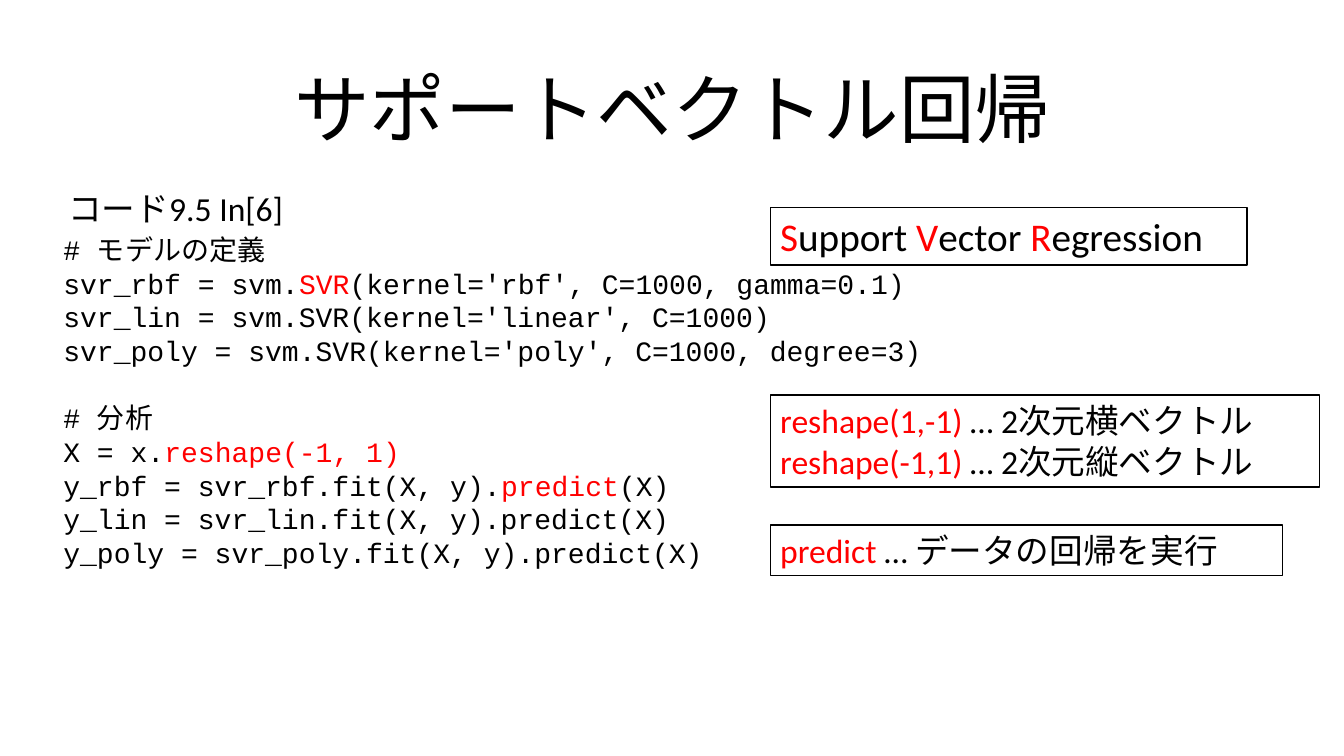
from lxml.etree import SubElement
from pptx import Presentation
from pptx.dml.color import RGBColor
from pptx.enum.shapes import MSO_SHAPE
from pptx.enum.text import MSO_ANCHOR, PP_ALIGN
from pptx.oxml.ns import qn
from pptx.util import Inches, Pt

COLORS = {"text": "000000", "key": "FF0000", "paper": "FFFFFF"}
JAPANESE = "Noto Sans CJK JP"


def write(frame, lines, font, size):
    """Fill a frame with lines of runs; text between * marks is in the key colour."""
    frame.word_wrap = True
    for number, line in enumerate(lines):
        paragraph = frame.paragraphs[0] if number == 0 else frame.add_paragraph()
        paragraph.alignment = PP_ALIGN.LEFT
        for part, words in enumerate(line.split("*")):
            if not words:
                continue
            run = paragraph.add_run()
            run.text = words
            run.font.name = font
            run.font.size = Pt(size)
            color = COLORS["key" if part % 2 else "text"]
            run.font.color.rgb = RGBColor.from_string(color)
            SubElement(run.font._element, qn("a:ea"), typeface=JAPANESE)


prs = Presentation()
prs.slide_width, prs.slide_height = Inches(13.33), Inches(7.5)
slide = prs.slides.add_slide(prs.slide_layouts[6])

# Title
title = slide.shapes.add_textbox(
    Inches(0.92), Inches(0.4), Inches(11.5), Inches(1.45)).text_frame
write(title, ["サポートベクトル回帰"], JAPANESE, 54)
title.vertical_anchor = MSO_ANCHOR.MIDDLE
title.paragraphs[0].alignment = PP_ALIGN.CENTER
title.paragraphs[0].line_spacing = 0.9

# Code listing
caption = slide.shapes.add_textbox(
    Inches(0.58), Inches(1.82), Inches(2.41), Inches(0.5)).text_frame
write(caption, ["コード9.5 In[6]"], "Calibri", 24)

model_code = [
    "# モデルの定義",
    "svr_rbf = svm.*SVR*(kernel='rbf', C=1000, gamma=0.1)",
    "svr_lin = svm.SVR(kernel='linear', C=1000)",
    "svr_poly = svm.SVR(kernel='poly', C=1000, degree=3)",
]
analysis_code = [
    "# 分析",
    "X = x.*reshape(-1, 1)*",
    "y_rbf = svr_rbf.fit(X, y).*predict*(X)",
    "y_lin = svr_lin.fit(X, y).predict(X)",
    "y_poly = svr_poly.fit(X, y).predict(X)",
]
code = slide.shapes.add_textbox(
    Inches(0.53), Inches(2.26), Inches(10.14), Inches(3.47)).text_frame
write(code, model_code + analysis_code, "Courier New", 20)
code.paragraphs[len(model_code)].space_before = Pt(24)

# Explanations beside the code: top, width, height, size, lines
notes = [
    (2.06, 4.73, 0.57, 28, ["*S*upport *V*ector *R*egression"]),
    (3.92, 5.45, 0.91, 24, ["*reshape(1,-1) *… 2次元横ベクトル",
                            "*reshape(-1,1) *… 2次元縦ベクトル"]),
    (5.21, 5.08, 0.5, 24, ["*predict* … データの回帰を実行"]),
]
for top, width, height, size, lines in notes:
    note = slide.shapes.add_shape(
        MSO_SHAPE.RECTANGLE, Inches(7.64), Inches(top), Inches(width), Inches(height))
    note.shadow.inherit = False
    note.fill.solid()
    note.fill.fore_color.rgb = RGBColor.from_string(COLORS["paper"])
    note.line.color.rgb = RGBColor.from_string(COLORS["text"])
    note.line.width = Pt(1)
    note.text_frame.vertical_anchor = MSO_ANCHOR.TOP
    write(note.text_frame, lines, "Calibri", size)

prs.save("out.pptx")
